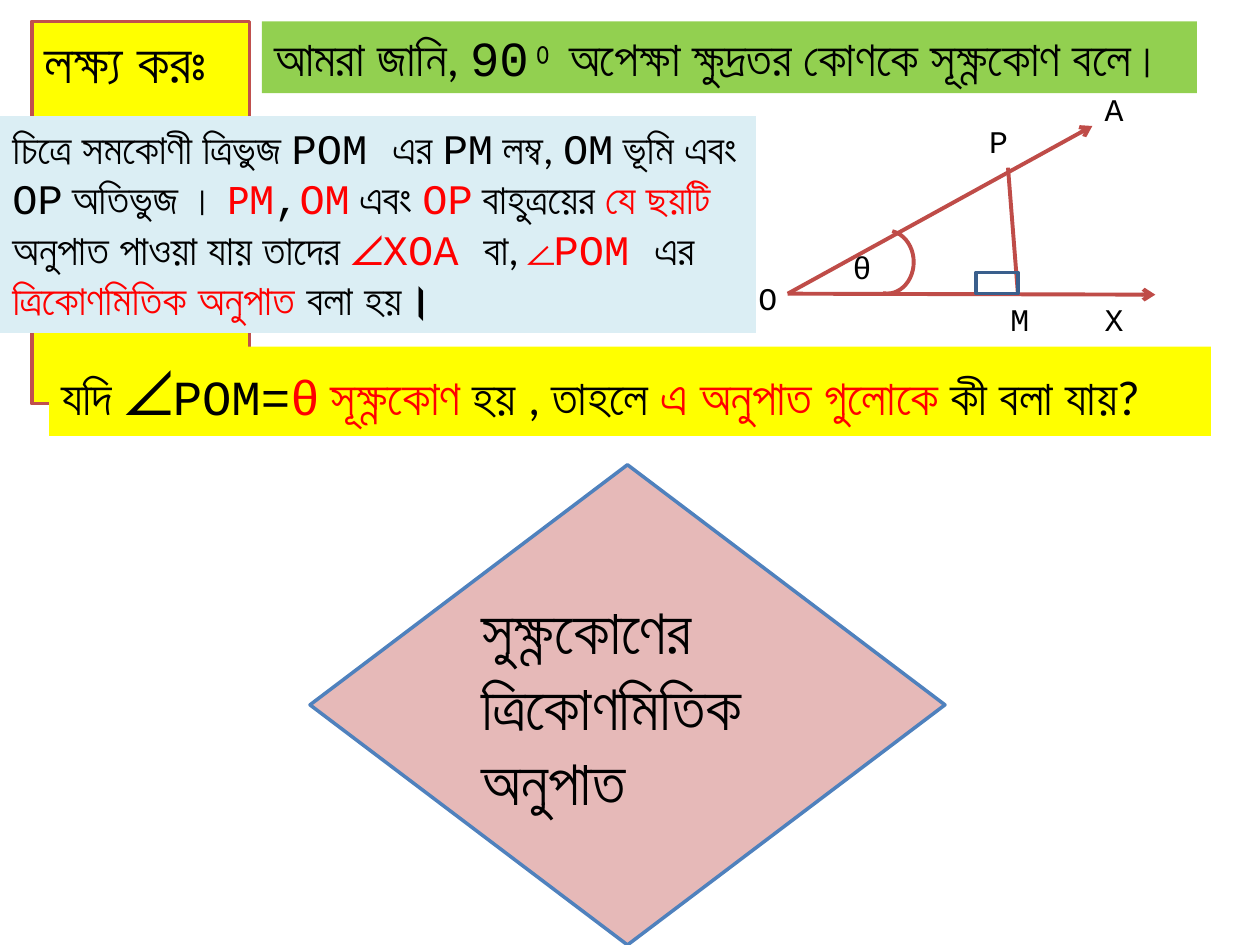
from lxml import etree
from pptx import Presentation
from pptx.dml.color import RGBColor
from pptx.enum import shapes as s, text as t
from pptx.oxml.ns import qn
from pptx.util import Cm, Pt

BLACK, RED, ROSE = "000000", "FF0000", "BF4C48"
BN, EN = "Calibri", "Courier New"

# Runs: words, font, colour, then size or bold where they differ
HEAD = [("লক্ষ্য করঃ", BN, BLACK)]
KNOWN = [
    ("আমরা জানি, ", BN, BLACK),
    ("90⁰", EN, BLACK),
    (" অপেক্ষা ক্ষুদ্রতর কোণকে সূক্ষ্ণকোণ বলে।", BN, BLACK),
]
RATIOS = [
    ("চিত্রে সমকোণী ত্রিভুজ ", BN, BLACK),
    ("POM ", EN, BLACK),
    ("এর ", BN, BLACK),
    ("PM", EN, BLACK),
    (" লম্ব, ", BN, BLACK),
    ("OM", EN, BLACK),
    (" ভূমি এবং ", BN, BLACK),
    ("OP", EN, BLACK),
    (" অতিভুজ । ", BN, BLACK),
    ("P", BN, RED),
    ("M", EN, RED),
    (",", EN, BLACK),
    ("OM", EN, RED),
    (" এবং ", BN, BLACK),
    ("OP", EN, RED),
    (" বাহুত্রয়ের ", BN, BLACK),
    ("যে ছয়টি ", BN, RED),
    ("অনুপাত পাওয়া যায় তাদের ", BN, BLACK),
    ("∠XOA ", EN, RED),
    ("বা, ", BN, BLACK),
    ("∠POM ", EN, RED),
    ("এর ", BN, BLACK),
    ("ত্রিকোণমিতিক অনুপাত ", BN, RED, {"bold": True}),
    ("বলা হয়।", BN, BLACK, {"bold": True}),
]
ASK = [
    ("যদি ", BN, BLACK),
    ("∠", EN, BLACK, {"size": Pt(36)}),
    ("POM=", EN, BLACK),
    ("θ", EN, RED),
    (" সূক্ষ্ণকোণ ", BN, RED),
    ("হয় , তাহলে ", BN, BLACK),
    ("এ অনুপাত গুলোকে ", BN, RED),
    ("কী বলা যায়?", BN, BLACK),
]
TOPIC = [("সুক্ষ্ণকোণের ত্রিকোণমিতিক অনুপাত", BN, BLACK)]

# Kind, place (cm), fill, line, runs, size, wrap
PANELS = [
    ("RECTANGLE", (5.28, 0.43, 18.85, 1.45), "92D050", None, KNOWN, 28, True),
    ("RECTANGLE", (0, 2.34, 15.24, 4.37), "DBEEF4", None, RATIOS, 24, True),
    ("RECTANGLE", (0.99, 6.99, 23.42, 1.8), "FFFF00", None, ASK, 28, False),
    ("DIAMOND", (6.25, 9.37, 12.8, 9.68), "E6B9B8", "4F81BD", TOPIC, 36, True),
]

# Points of the triangle (cm)
O, P, M = (15.88, 5.92), (20.32, 3.38), (20.52, 5.92)
A, X = (22.02, 2.54), (23.29, 5.94)
EDGES = [(O, X, True), (O, A, True), (P, M, False)]
LABELS = [
    ("θ", 16.94, 4.88, 1.07), ("A", 22.02, 1.7, 0.74), ("X", 22.02, 5.92, 0.84),
    ("O", 15.04, 5.51, 0.84), ("M", 20.12, 5.92, 1.07), ("P", 19.69, 2.34, 0.94),
]


def rgb(code):
    return RGBColor.from_string(code)


def paint(shape, fill, line, width=2):
    shape.shadow.inherit = False
    if fill:
        shape.fill.solid()
        shape.fill.fore_color.rgb = rgb(fill)
    else:
        shape.fill.background()
    if line:
        shape.line.color.rgb = rgb(line)
        shape.line.width = Pt(width)
    else:
        shape.line.fill.background()


def write(shape, runs, size, wrap=True, anchor=t.MSO_ANCHOR.TOP):
    frame = shape.text_frame
    frame.word_wrap = wrap
    frame.auto_size = t.MSO_AUTO_SIZE.SHAPE_TO_FIT_TEXT
    frame.vertical_anchor = anchor
    para = frame.paragraphs[0]
    para.alignment = t.PP_ALIGN.LEFT
    for words, face, color, *more in runs:
        run = para.add_run()
        run.text = words
        extra = more[0] if more else {}
        run.font.name = face
        run.font.size = extra.get("size", Pt(size))
        run.font.bold = extra.get("bold")
        run.font.color.rgb = rgb(color)


def add(slide, kind, place):
    return slide.shapes.add_shape(kind, *map(Cm, place))


def draw_edge(slide, start, end, arrow):
    edge = slide.shapes.add_connector(
        s.MSO_CONNECTOR.STRAIGHT, *map(Cm, start + end))
    edge.line.color.rgb = rgb(ROSE)
    edge.line.width = Pt(2.25)
    props = edge._element.spPr
    if arrow:
        etree.SubElement(props.find(qn("a:ln")), qn("a:tailEnd"), type="arrow")
    etree.SubElement(props, qn("a:effectLst"))


def draw_figure(slide):
    for edge in EDGES:
        draw_edge(slide, *edge)
    for name, x, y, w in LABELS:
        box = slide.shapes.add_textbox(*map(Cm, (x, y, w, 1.02)))
        write(box, [(name, EN, BLACK)], 18)
    arc = add(slide, s.MSO_SHAPE.ARC, (17.35, 4.65, 1.07, 1.27))
    arc.adjustments[0], arc.adjustments[1] = 167.64, 58.44
    paint(arc, None, ROSE, 2.25)
    w, h = 0.84, 0.43
    square = add(slide, s.MSO_SHAPE.RECTANGLE, (M[0] - w, M[1] - h, w, h))
    paint(square, None, "3A5F8C")


def main():
    deck = Presentation()
    deck.slide_width, deck.slide_height = Cm(25.4), Cm(19.05)
    slide = deck.slides.add_slide(deck.slide_layouts[5])

    title = slide.shapes.title
    title.left, title.top, title.width, title.height = map(
        Cm, (0.64, 0.43, 4.39, 1.63))
    paint(title, "FFFF00", "C0504D")
    write(title, HEAD, 32, False)

    draw_figure(slide)
    for kind, place, fill, line, runs, size, wrap in PANELS:
        panel = add(slide, s.MSO_SHAPE[kind], place)
        paint(panel, fill, line)
        mid = kind == "DIAMOND"
        write(panel, runs, size, wrap,
              t.MSO_ANCHOR.MIDDLE if mid else t.MSO_ANCHOR.TOP)
    deck.save("out.pptx")


if __name__ == "__main__":
    main()
